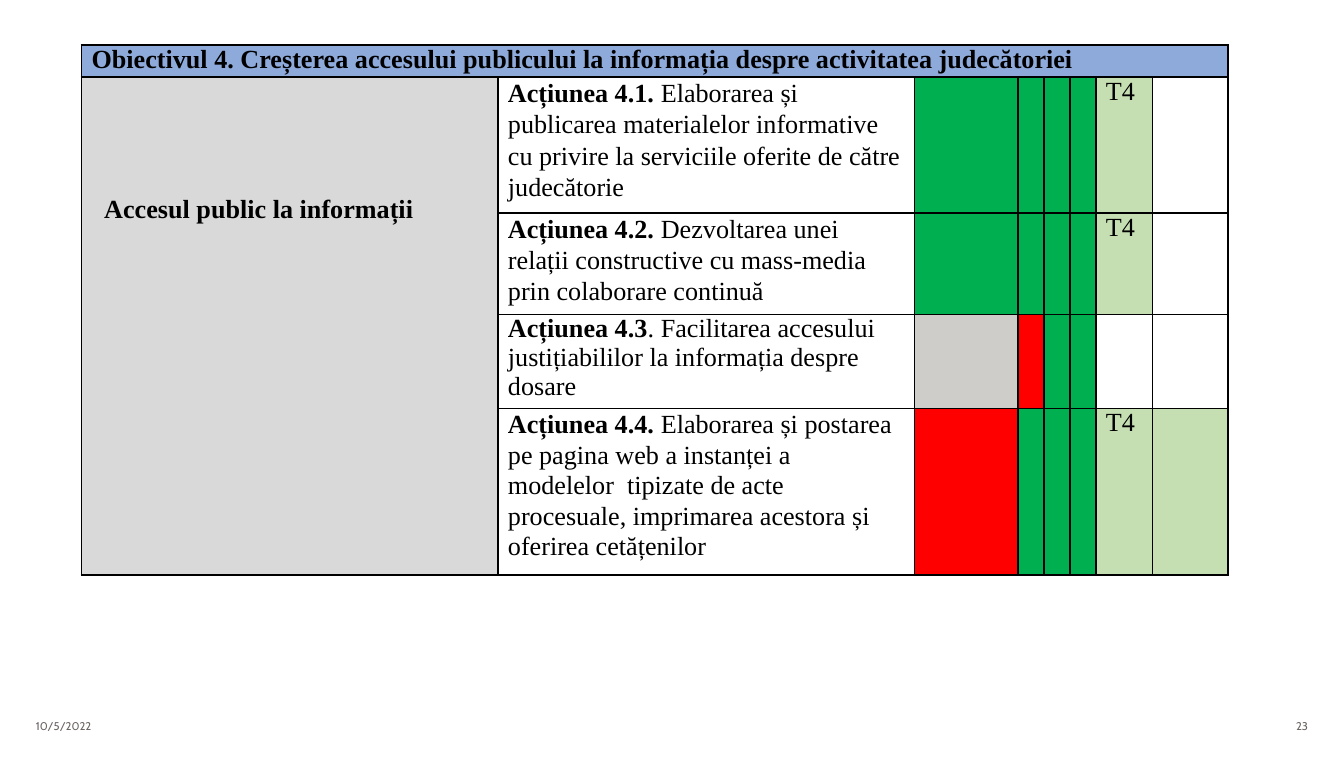
from lxml import etree
from pptx import Presentation
from pptx.dml.color import RGBColor
from pptx.enum import text
from pptx.oxml.ns import qn
from pptx.util import Cm, Pt

GREEN, RED, GREY = "00B050", "FF0000", "CFCDC9"
PALE, WHITE, BLACK = "C5DFB3", "FFFFFF", "000000"
SERIF = "Times New Roman"
COLUMNS = [7.87, 7.87, 1.96, 0.49, 0.49, 0.49, 1.07, 1.43]
ROWS = [0.61, 2.56, 1.92, 1.78, 3.14]
ACTIONS = [
    ("Acțiunea 4.1. ", "Elaborarea și\npublicarea materialelor informative\n"
     "cu privire la serviciile oferite de către judecătorie", 1.08, 0, "T4",
     [GREEN, GREEN, GREEN, GREEN, PALE, WHITE]),
    ("Acțiunea 4.2. ", "Dezvoltarea unei relații constructive cu mass-media prin "
     "colaborare continuă", 1.08, 0.35, "T4",
     [GREEN, GREEN, GREEN, GREEN, PALE, WHITE]),
    ("Acțiunea 4.3", ". Facilitarea accesului justițiabililor la informația despre dosare",
     1.0, 0.35, "", [GREY, RED, GREEN, GREEN, WHITE, WHITE]),
    ("Acțiunea 4.4. ", "Elaborarea și postarea pe pagina web a instanței a modelelor  "
     "tipizate de acte procesuale, imprimarea acestora și oferirea cetățenilor",
     1.06, 0.35, "T4", [RED, GREEN, GREEN, GREEN, PALE, PALE]),
]


def rgb(value):
    return RGBColor.from_string(value)


def add_run(p, words, size=14, font=SERIF, color=BLACK, bold=False):
    for i, line in enumerate(words.split("\n")):
        if i:
            p.add_line_break()
        r = p.add_run()
        r.text = line
        r.font.size = Pt(size)
        r.font.name = font
        r.font.bold = bold
        r.font.color.rgb = rgb(color)


def add_borders(cell):
    tc_pr = cell._tc.get_or_add_tcPr()
    for i, side in enumerate(("lnL", "lnR", "lnT", "lnB")):
        ln = etree.Element(qn("a:" + side), w=str(Pt(1)))
        fill = etree.SubElement(ln, qn("a:solidFill"))
        etree.SubElement(fill, qn("a:srgbClr"), val=BLACK)
        tc_pr.insert(i, ln)


def style_cell(cell):
    cell.margin_left = Cm(0.19)
    cell.margin_right = cell.margin_top = cell.margin_bottom = 0
    cell.fill.background()
    add_borders(cell)


def fill_cell(cell, color):
    cell.fill.solid()
    cell.fill.fore_color.rgb = rgb(color)


def write_cell(cell, runs, spacing=1.0):
    p = cell.text_frame.paragraphs[0]
    p.line_spacing = spacing
    for words, bold in runs:
        add_run(p, words, bold=bold)


def add_action(table, row, action):
    title, description, spacing, margin, quarter, colors = action
    cell = table.cell(row, 1)
    cell.margin_right = Cm(margin)
    write_cell(cell, [(title, True), (description, False)], spacing)
    for col, color in enumerate(colors, start=2):
        fill_cell(table.cell(row, col), color)
    if quarter:
        write_cell(table.cell(row, 6), [(quarter, False)])


def add_plan(s):
    frame = s.shapes.add_table(len(ROWS), len(COLUMNS), Cm(1.54), Cm(0.85),
                               Cm(sum(COLUMNS)), Cm(sum(ROWS)))
    table = frame.table
    for column, width in zip(table.columns, COLUMNS):
        column.width = Cm(width)
    for row, height in zip(table.rows, ROWS):
        row.height = Cm(height)
    for cell in table.iter_cells():
        style_cell(cell)

    header, access = table.cell(0, 0), table.cell(1, 0)
    header.merge(table.cell(0, len(COLUMNS) - 1))
    fill_cell(header, "8EAADB")
    write_cell(header, [("Obiectivul 4. Creșterea accesului publicului la informația "
                         "despre activitatea judecătoriei", True)])
    access.merge(table.cell(len(ROWS) - 1, 0))
    fill_cell(access, "D9D9D9")
    access.margin_left, access.margin_top = Cm(0.43), Cm(2.2)
    write_cell(access, [("Accesul public la informații", True)], 1.06)
    for row, action in enumerate(ACTIONS, start=1):
        add_action(table, row, action)


def add_footer(s, left, words, align):
    sp = s.shapes.add_textbox(Cm(left), Cm(13.46), Cm(5.92), Cm(0.51))
    tf = sp.text_frame
    tf.word_wrap = True
    tf.vertical_anchor = text.MSO_ANCHOR.MIDDLE
    p = tf.paragraphs[0]
    p.alignment = align
    add_run(p, words, 6, "Cabin", "6C6463")


def main():
    prs = Presentation()
    prs.slide_width, prs.slide_height = Cm(25.4), Cm(14.4)
    s = prs.slides.add_slide(prs.slide_layouts[6])
    add_footer(s, 0.43, "10/5/2022", text.PP_ALIGN.LEFT)
    add_footer(s, 19.05, "23", text.PP_ALIGN.RIGHT)
    add_plan(s)
    prs.save("out.pptx")


if __name__ == "__main__":
    main()
